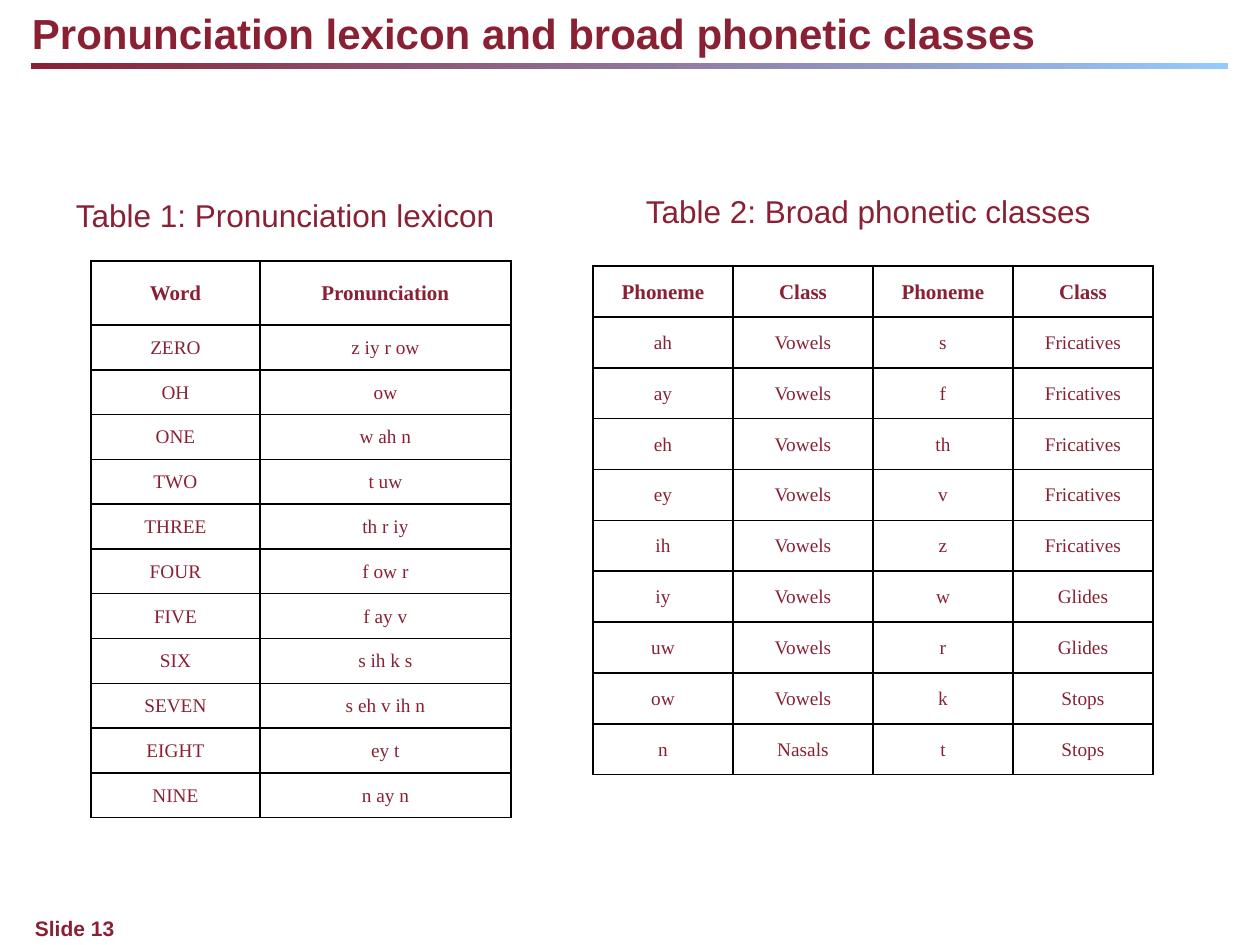
from dataclasses import dataclass

from lxml.etree import SubElement as Sub
from pptx import Presentation as Deck
from pptx.dml.color import RGBColor as RGB
from pptx.enum.shapes import MSO_SHAPE as Kind
from pptx.enum.text import MSO_ANCHOR as Anchor, MSO_AUTO_SIZE as Fit, PP_ALIGN as Align
from pptx.oxml.ns import qn
from pptx.util import Emu, Pt

WINE = RGB(0x89, 0x20, 0x34)
SKY = RGB(0x95, 0xCA, 0xFF)
BLACK = RGB(0, 0, 0)
SANS = "Arial"
SERIF = "Times New Roman"


@dataclass
class Label:
    text: str
    box: tuple[int, int, int, int]
    size: int
    bold: bool = False
    inset: tuple[int, int] = (0, 0)
    wrap: bool = True


@dataclass
class Grid:
    box: tuple[int, int, int, int]
    cols: list[int]
    head: int
    rows: list[list[str]]


LABELS = [
    Label("Pronunciation lexicon and broad phonetic classes", (32, 8, 1187, 50), 24, True),
    Label("Slide 13", (35, 916, 1124, 25), 12, True),
    Label("Table 1: Pronunciation lexicon", (63, 190, 447, 50), 18, False, (13, 6), False),
    Label("Table 2: Broad phonetic classes", (633, 186, 471, 50), 18, False, (13, 6), False),
]

WORDS = [
    ["Word", "Pronunciation"],
    ["ZERO", "z iy r ow"],
    ["OH", "ow"],
    ["ONE", "w ah n"],
    ["TWO", "t uw"],
    ["THREE", "th r iy"],
    ["FOUR", "f ow r"],
    ["FIVE", "f ay v"],
    ["SIX", "s ih k s"],
    ["SEVEN", "s eh v ih n"],
    ["EIGHT", "ey t"],
    ["NINE", "n ay n"],
]

SOUNDS = [
    ["Phoneme", "Class", "Phoneme", "Class"],
    ["ah", "Vowels", "s", "Fricatives"],
    ["ay", "Vowels", "f", "Fricatives"],
    ["eh", "Vowels", "th", "Fricatives"],
    ["ey", "Vowels", "v", "Fricatives"],
    ["ih", "Vowels", "z", "Fricatives"],
    ["iy", "Vowels", "w", "Glides"],
    ["uw", "Vowels", "r", "Glides"],
    ["ow", "Vowels", "k", "Stops"],
    ["n", "Nasals", "t", "Stops"],
]

GRIDS = [
    Grid((91, 261, 420, 557), [169, 251], 64, WORDS),
    Grid((593, 266, 560, 509), [140] * 4, 51, SOUNDS),
]


def px(num: int) -> Emu:
    return Emu(round(num * 914400 / 126))


def write(para, text: str, font: str, size: int, bold: bool) -> None:
    run = para.add_run()
    run.text = text
    run.font.name = font
    run.font.size = Pt(size)
    run.font.bold = bold
    run.font.color.rgb = WINE


def add_bar(slide) -> None:
    bar = slide.shapes.add_shape(Kind.RECTANGLE, *map(px, (31, 63, 1197, 6)))
    bar.shadow.inherit = False
    bar.line.fill.background()
    bar.fill.gradient()
    bar.fill.gradient_angle = 0
    for stop, tone in zip(bar.fill.gradient_stops, (WINE, SKY)):
        stop.color.rgb = tone


def add_label(slide, label: Label) -> None:
    frame = slide.shapes.add_textbox(*map(px, label.box)).text_frame
    side, edge = map(px, label.inset)
    frame.margin_left = frame.margin_right = side
    frame.margin_top = frame.margin_bottom = edge
    frame.word_wrap = label.wrap
    frame.auto_size = Fit.SHAPE_TO_FIT_TEXT
    write(frame.paragraphs[0], label.text, SANS, label.size, label.bold)


def add_lines(cell) -> None:
    props = cell._tc.get_or_add_tcPr()
    for side in ("a:lnL", "a:lnR", "a:lnT", "a:lnB"):
        line = Sub(props, qn(side), w=str(Pt(1)))
        Sub(Sub(line, qn("a:solidFill")), qn("a:srgbClr"), val=str(BLACK))


def add_grid(slide, grid: Grid) -> None:
    count = len(grid.rows)
    shape = slide.shapes.add_table(count, len(grid.cols), *map(px, grid.box))
    table = shape.table
    table.first_row = table.horz_banding = False
    for col, width in zip(table.columns, grid.cols):
        col.width = px(width)
    body = Emu(px(grid.box[3] - grid.head) // (count - 1))
    for i, texts in enumerate(grid.rows):
        top = i == 0
        table.rows[i].height = px(grid.head) if top else body
        for j, text in enumerate(texts):
            cell = table.cell(i, j)
            add_lines(cell)
            cell.fill.background()
            cell.vertical_anchor = Anchor.MIDDLE
            cell.margin_left = cell.margin_right = cell.margin_top = px(1)
            cell.margin_bottom = 0
            para = cell.text_frame.paragraphs[0]
            para.alignment = Align.CENTER
            write(para, text, SERIF, 12 if top else 11, top)


def main() -> None:
    deck = Deck()
    deck.slide_width, deck.slide_height = px(1260), px(945)
    slide = deck.slides.add_slide(deck.slide_layouts[6])
    add_bar(slide)
    for grid in GRIDS:
        add_grid(slide, grid)
    for label in LABELS:
        add_label(slide, label)
    deck.save("out.pptx")


if __name__ == "__main__":
    main()
